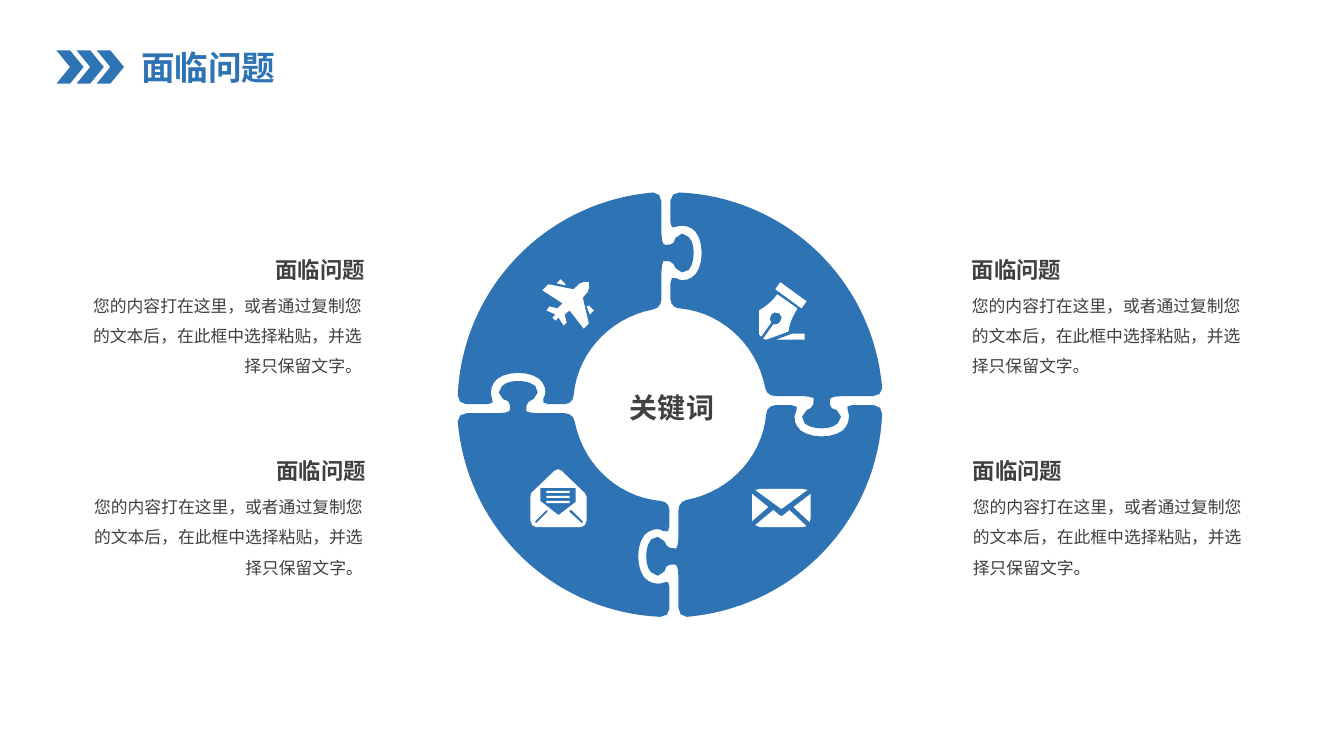
"""Builds a slide with a four-piece puzzle ring and four notes around it."""
from lxml import etree
from pptx import Presentation
from pptx.dml.color import RGBColor
from pptx.enum.shapes import MSO_SHAPE
from pptx.enum.text import MSO_ANCHOR, MSO_AUTO_SIZE, PP_ALIGN
from pptx.oxml.ns import qn
from pptx.util import Inches, Pt

CHEVRON = MSO_SHAPE.CHEVRON
TOP = MSO_ANCHOR.TOP
GROW = MSO_AUTO_SIZE.SHAPE_TO_FIT_TEXT
LEFT, CENTER, RIGHT = PP_ALIGN.LEFT, PP_ALIGN.CENTER, PP_ALIGN.RIGHT

BLUE = RGBColor(0x2E, 0x73, 0xB4)
GRAY = RGBColor(0x40, 0x40, 0x40)
WHITE = RGBColor(0xFF, 0xFF, 0xFF)
FONT = "Noto Sans CJK SC"

TITLE_FONT = {"size": Pt(24), "bold": True, "name": FONT}
KEYWORD_FONT = {"size": Pt(20), "bold": True, "name": FONT}
HEADING_FONT = {"size": Pt(16), "bold": True, "name": FONT}
BODY_FONT = {"size": Pt(12), "bold": False, "name": FONT}

HEADING = "面临问题"
KEYWORD = "关键词"
BODY = "您的内容打在这里，或者通过复制您的文本后，在此框中选择粘贴，并选择只保留文字。"

PIECE = """M 40 186 C 45 182 53 180 61 180 C 69 180 77 182 82 186
C 86 190 88 194 88 199 C 88 201 87 204 86 205 C 84 209 86 211 91 211 L 107 211
C 112 211 116 207 116 202 C 120 159 153 125 195 117 C 200 116 203 112 203 107
L 203 80 C 203 75 204 71 205 69 L 207 69 C 210 69 213 69 215 72
L 217 76 C 220 81 227 82 230 78 C 234 73 235 67 235 61
C 235 55 234 49 230 45 C 227 40 220 41 217 46 L 215 51
C 213 53 210 53 207 53 L 205 52 C 204 52 203 46 203 41 L 203 10
C 203 5 200 1 195 1 C 89 10 6 95 1 202 C 0 207 5 211 9 211 L 31 211
C 36 211 37 209 35 205 C 34 204 34 201 34 199 C 34 194 36 190 40 186"""

ENVELOPE = """M 8 0 L 50 0 L 55 1 L 29 20 L 3 1
M 58 5 L 41 18 L 57 33 L 58 29
M 54 37 L 50 38 L 8 38 L 3 36 L 21 21 L 27 26 L 29 27 L 31 26 L 37 21
M 0 32 L 16 18 L 0 5"""

LETTER = """M 54 24 C 55 25 56 27 56 28 L 56 51 C 56 55 53 58 50 58 L 6 58
C 3 58 0 55 0 51 L 0 28 L 1 24 L 24 2 C 26 0 29 0 31 2
M 10 19 L 10 32 L 28 46 L 45 33 L 45 19
M 16 22 L 16 24 L 39 24 L 39 22
M 16 27 L 16 29 L 39 29 L 39 27
M 16 32 L 16 34 L 39 34 L 39 32
M 6 54 L 17 43 L 17 41 L 16 41 L 5 52 L 5 54
M 52 52 L 41 41 L 39 41 L 39 43 L 51 54 L 52 54"""

PLANE = """M 46 3 C 47 9 46 13 41 17 L 40 18 L 46 44 L 41 49 L 27 31 L 22 35
L 24 43 L 21 46 L 16 38 L 13 41 L 10 38 L 13 35 L 4 31 L 7 27 L 15 29 L 20 24
L 0 11 L 6 5 L 31 10 L 33 8 C 37 3 41 2 46 3
M 51 31 L 46 26 L 44 27 L 47 35
M 18 0 L 14 4 L 22 6 L 23 5"""

PEN = """M 2 54 L 0 52 L 0 28 C 7 24 13 19 18 12 L 38 26
C 33 34 30 41 29 49 L 7 57 L 4 56 L 14 42
C 17 42 20 42 21 39 C 23 37 23 33 20 31 C 17 29 13 30 12 32 C 10 35 10 38 12 40
M 17 57 L 45 57 L 45 51 L 33 51
M 42 26 L 47 19 L 21 0 L 16 7"""


def style_shape(shape, color):
    """Give a shape a plain fill without line or shadow."""
    shape.fill.solid()
    shape.fill.fore_color.rgb = color
    shape.line.fill.background()
    shape.shadow.inherit = False


def write_text(frame, text, font, color, frame_format, paragraph_format):
    """Write one formatted paragraph into a text frame."""
    frame.text = text
    paragraph = frame.paragraphs[0]
    run = paragraph.runs[0]
    for target, values in ((frame, frame_format), (paragraph, paragraph_format), (run.font, font)):
        for name, value in values.items():
            setattr(target, name, value)
    run.font.color.rgb = color
    etree.SubElement(run._r.get_or_add_rPr(), qn("a:ea"), typeface=FONT)


def add_label(slide, box, text, font, **paragraph_format):
    """Add a text box without margins at the given box in inches."""
    label = slide.shapes.add_textbox(*map(Inches, box))
    frame_format = {"word_wrap": True, "auto_size": GROW, "vertical_anchor": TOP}
    frame_format.update({f"margin_{side}": 0 for side in ("left", "top", "right", "bottom")})
    write_text(label.text_frame, text, font, GRAY, frame_format, paragraph_format)


def trace_curve(curve):
    """Return points along a cubic curve, more of them for a longer one."""
    span = sum(abs(end - start) for start, end in zip(curve[0], curve[-1]))
    steps = 1 + round(span / 12)
    points = []
    for step in range(1, steps + 1):
        t = step / steps
        weights = ((1 - t) ** 3, 3 * t * (1 - t) ** 2, 3 * t * t * (1 - t), t ** 3)
        points.append(tuple(sum(w * p[axis] for w, p in zip(weights, curve)) for axis in (0, 1)))
    return points


def trace_contours(outline):
    """Turn an outline of M, L and C commands into lists of points."""
    contours = []
    tokens = iter(outline.split())
    for command in tokens:
        count = 3 if command == "C" else 1
        points = [(int(next(tokens)), int(next(tokens))) for _ in range(count)]
        if command == "M":
            contours.append(points)
        elif command == "L":
            contours[-1] += points
        else:
            contours[-1] += trace_curve([contours[-1][-1], *points])
    return contours


def add_outline(slide, left, top, outline, color, turns=0, size=0):
    """Draw an outline in hundredths of an inch, in quarter turns within a square."""
    contours = []
    for contour in trace_contours(outline):
        for _ in range(turns):
            contour = [(size - y, x) for x, y in contour]
        contours.append([(Inches(x / 100), Inches(y / 100)) for x, y in contour])
    builder = slide.shapes.build_freeform(*contours[0][0])
    for number, contour in enumerate(contours):
        if number:
            builder.move_to(*contour[0])
        builder.add_line_segments(contour[1:], close=True)
    style_shape(builder.convert_to_shape(Inches(left), Inches(top)), color)


def add_header(slide, left, top):
    """Place three chevrons and the slide title."""
    chevrons = slide.shapes.add_group_shape()
    for number in range(3):
        box = (left + 0.2 * number, top + 0.08, 0.27, 0.33)
        style_shape(chevrons.shapes.add_shape(CHEVRON, *map(Inches, box)), BLUE)
    title = slide.shapes.title
    place = zip(("left", "top", "width", "height"), (left + 0.74, top, 1.55, 0.5))
    for name, value in place:
        setattr(title, name, Inches(value))
    frame_format = {"word_wrap": False, "auto_size": GROW, "vertical_anchor": TOP}
    write_text(title.text_frame, HEADING, TITLE_FONT, BLUE, frame_format,
               {"alignment": LEFT, "line_spacing": 1.0, "space_before": Pt(0)})


def add_ring(slide, left, top, size):
    """Place the four puzzle pieces, their icons and the keyword."""
    for turns in range(4):
        add_outline(slide, left, top, PIECE, BLUE, turns, size * 100)
    add_label(slide, (left + 1.59, top + 1.97, 1.09, 0.34), KEYWORD, KEYWORD_FONT,
              alignment=CENTER)
    icons = ((2.93, 2.95, ENVELOPE), (0.73, 2.75, LETTER), (0.85, 0.87, PLANE), (3, 0.9, PEN))
    for across, down, icon in icons:
        add_outline(slide, left + across, top + down, icon, WHITE)


def add_note(slide, left, top, alignment):
    """Place a heading above its body text, aligned to one side."""
    indent = 1.61 if alignment == RIGHT else 0
    add_label(slide, (left + indent, top, 1.09, 0.27), HEADING, HEADING_FONT,
              alignment=alignment)
    add_label(slide, (left, top + 0.29, 2.67, 0.91), BODY, BODY_FONT,
              alignment=alignment, line_spacing=1.5)


def main():
    """Build and save the slide."""
    deck = Presentation()
    deck.slide_width, deck.slide_height = Inches(13.33), Inches(7.5)
    slide = deck.slides.add_slide(deck.slide_layouts[5])
    add_header(slide, 0.56, 0.42)
    add_ring(slide, 4.53, 1.9, 4.23)
    for left, alignment in ((9.64, LEFT), (0.92, RIGHT)):
        for row in range(2):
            add_note(slide, left + 0.01 * row, 2.54 + 2 * row, alignment)
    deck.save("out.pptx")


if __name__ == "__main__":
    main()
